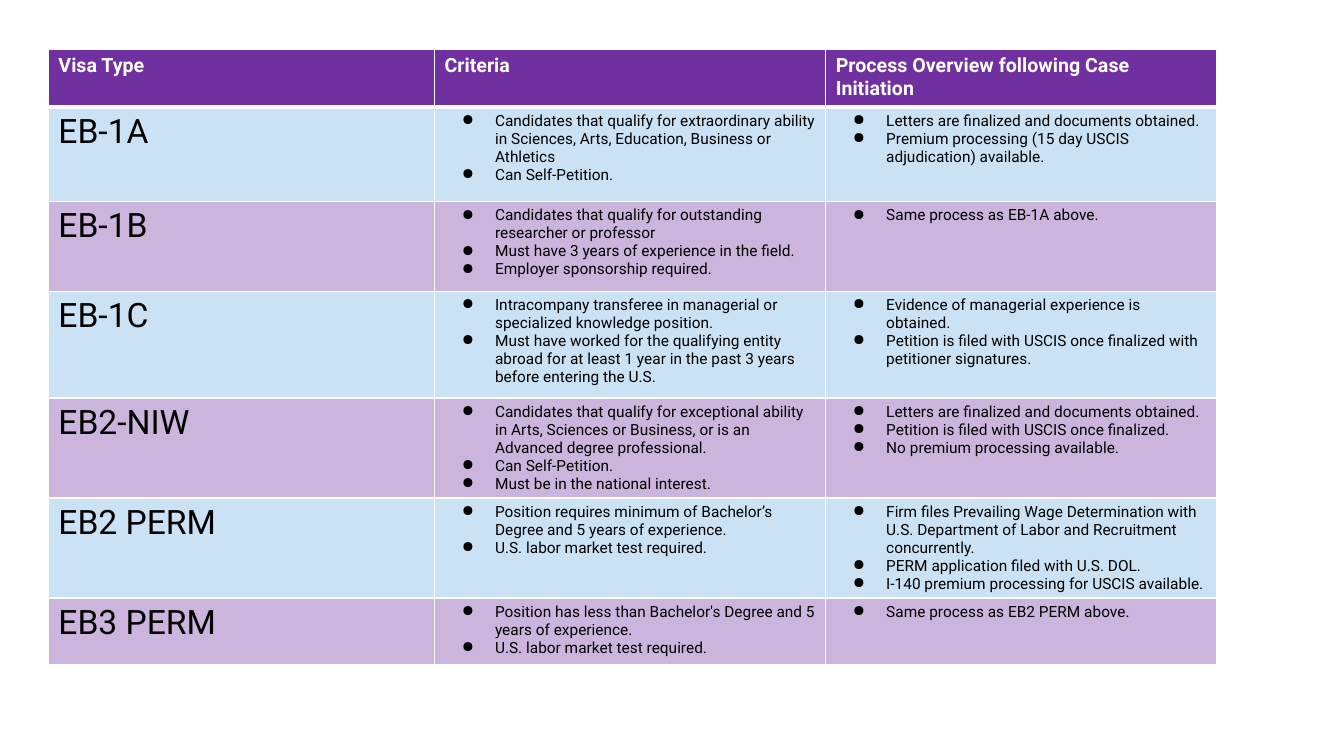
import pptx
import pptx.util
import pptx.dml.color
import pptx.oxml
import pptx.oxml.ns
import lxml.etree

PX = 9144  # 100 px to the inch
WHITE = pptx.dml.color.RGBColor(0xFF, 0xFF, 0xFF)
BLACK = pptx.dml.color.RGBColor(0x00, 0x00, 0x00)
PURPLE = pptx.dml.color.RGBColor(0x70, 0x30, 0xA0)
BLUE = pptx.dml.color.RGBColor(0xCB, 0xE2, 0xF5)
LILAC = pptx.dml.color.RGBColor(0xCC, 0xB5, 0xDD)
FONT = "Roboto"

COL_WIDTHS = [383, 388, 388]
ROW_HEIGHTS = [57, 94, 89, 106, 98, 93, 66]
HEADERS = ["Visa Type", "Criteria", "Process Overview following Case Initiation"]
VISAS = [
    ("EB-1A",
     ["Candidates that qualify for extraordinary ability in Sciences, Arts, "
      "Education, Business or Athletics",
      "Can Self-Petition."],
     ["Letters are finalized and documents obtained.",
      "Premium processing (15 day USCIS adjudication) available."]),
    ("EB-1B",
     ["Candidates that qualify for outstanding researcher or professor",
      "Must have 3 years of experience in the field.",
      "Employer sponsorship required."],
     ["Same process as EB-1A above."]),
    ("EB-1C",
     ["Intracompany transferee in managerial or specialized knowledge position.",
      "Must have worked for the qualifying entity abroad for at least 1 year "
      "in the past 3 years before entering the U.S."],
     ["Evidence of managerial experience is obtained.",
      "Petition is filed with USCIS once finalized with petitioner signatures."]),
    ("EB2-NIW",
     ["Candidates that qualify for exceptional ability in Arts, Sciences or "
      "Business, or is an Advanced degree professional.",
      "Can Self-Petition.",
      "Must be in the national interest."],
     ["Letters are finalized and documents obtained.",
      "Petition is filed with USCIS once finalized.",
      "No premium processing available."]),
    ("EB2 PERM",
     ["Position requires minimum of Bachelor’s Degree and 5 years of experience.",
      "U.S. labor market test required."],
     ["Firm files Prevailing Wage Determination with U.S. Department of Labor "
      "and Recruitment concurrently.",
      "PERM application filed with U.S. DOL.",
      "I-140 premium processing for USCIS available."]),
    ("EB3 PERM",
     ["Position has less than Bachelor's Degree and 5 years of experience.",
      "U.S. labor market test required."],
     ["Same process as EB2 PERM above."]),
]


def px(n):
    return pptx.util.Emu(n * PX)


def add_run(p, text, size, color, bold=False):
    r = p.add_run()
    r.text = text
    r.font.name = FONT
    r.font.size = pptx.util.Pt(size)
    r.font.bold = bold
    r.font.color.rgb = color


def add_bullet(p):
    pPr = p._p.get_or_add_pPr()
    pPr.set("marL", str(px(50)))
    pPr.set("indent", str(px(-33)))
    buClr = lxml.etree.SubElement(pPr, pptx.oxml.ns.qn("a:buClr"))
    lxml.etree.SubElement(buClr, pptx.oxml.ns.qn("a:srgbClr"), val=str(BLACK))
    lxml.etree.SubElement(pPr, pptx.oxml.ns.qn("a:buChar"), char="●")


def style_cell(cell, fill, top=1, bottom=1):
    cell.margin_left = cell.margin_right = px(10)
    cell.margin_top = cell.margin_bottom = px(5)
    cell.fill.solid()
    cell.fill.fore_color.rgb = fill
    # Border lines come before the fill in the cell properties
    tcPr = cell._tc.get_or_add_tcPr()
    for i, (side, width) in enumerate(zip("LRTB", (1, 1, top, bottom))):
        tcPr.insert(i, pptx.oxml.parse_xml(
            f'<a:ln{side} {pptx.oxml.ns.nsdecls("a")} w="{pptx.util.Pt(width)}">'
            f'<a:solidFill><a:srgbClr val="{WHITE}"/></a:solidFill></a:ln{side}>'))


def fill_bullets(cell, items):
    tf = cell.text_frame
    for i, item in enumerate(items):
        p = tf.add_paragraph() if i else tf.paragraphs[0]
        add_bullet(p)
        add_run(p, item, 11, BLACK)


def add_visa_table(s):
    frame = s.shapes.add_table(len(ROW_HEIGHTS), len(COL_WIDTHS), px(48), px(49),
                               px(sum(COL_WIDTHS)), px(sum(ROW_HEIGHTS)))
    table = frame.table
    table.first_row = table.horz_banding = False
    for col, width in zip(table.columns, COL_WIDTHS):
        col.width = px(width)
    for row, height in zip(table.rows, ROW_HEIGHTS):
        row.height = px(height)

    # Header row
    for c, header in enumerate(HEADERS):
        cell = table.cell(0, c)
        style_cell(cell, PURPLE, bottom=3)
        add_run(cell.text_frame.paragraphs[0], header, 14, WHITE, bold=True)

    # One row per visa, in alternating colours
    for i, (visa, criteria, process) in enumerate(VISAS, start=1):
        for c in range(len(COL_WIDTHS)):
            style_cell(table.cell(i, c), BLUE if i % 2 else LILAC,
                       top=3 if i == 1 else 1)
        add_run(table.cell(i, 0).text_frame.paragraphs[0], visa, 24, BLACK)
        fill_bullets(table.cell(i, 1), criteria)
        fill_bullets(table.cell(i, 2), process)


def main():
    prs = pptx.Presentation()
    prs.slide_width, prs.slide_height = px(1333), px(750)
    s = prs.slides.add_slide(prs.slide_layouts[6])
    s.background.fill.solid()
    s.background.fill.fore_color.rgb = WHITE
    add_visa_table(s)
    prs.save("out.pptx")


if __name__ == "__main__":
    main()
